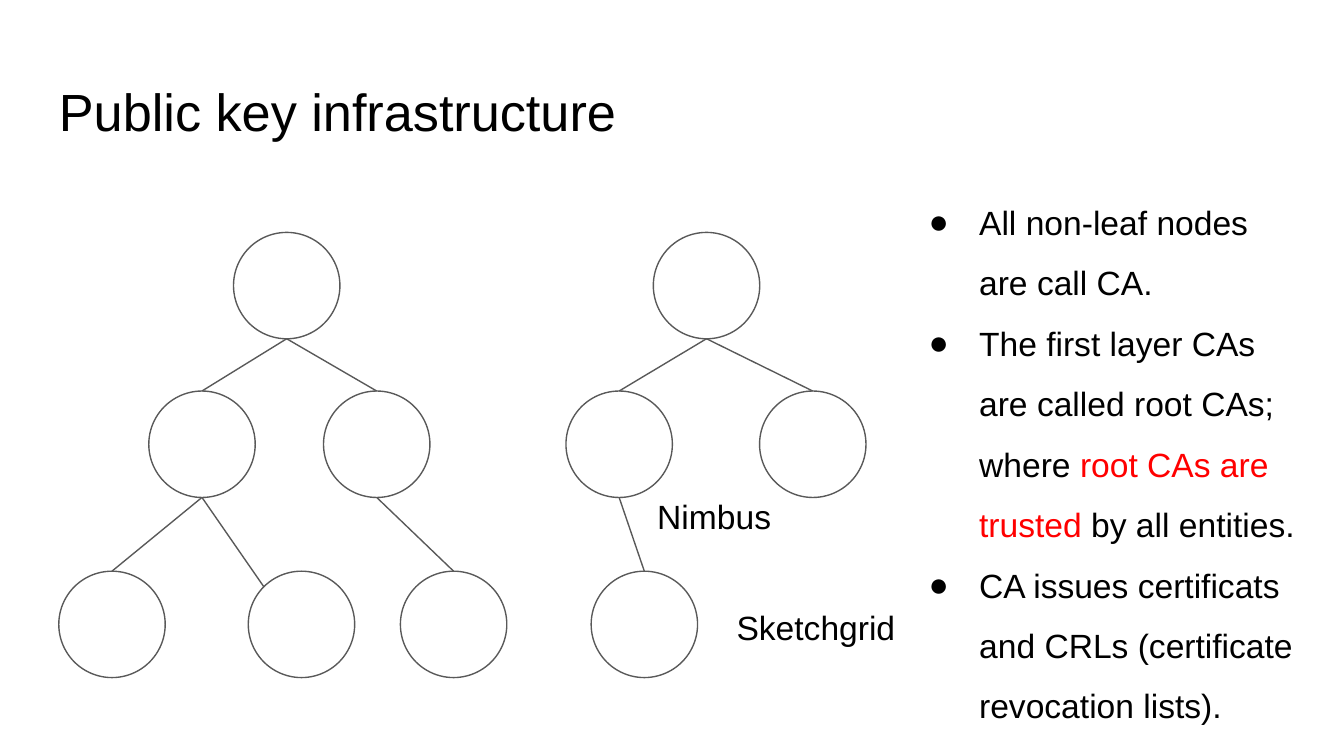
import pptx
import pptx.util
import pptx.dml.color
import pptx.enum.shapes
import pptx.enum.text
from dataclasses import dataclass
from lxml import etree

Pt = pptx.util.Pt
RGB = pptx.dml.color.RGBColor.from_string


@dataclass(frozen=True)
class Theme:
    font: str = "Arial"
    text: str = "000000"
    accent: str = "FF0000"
    line: str = "595959"
    title_size: float = 28
    body_size: float = 18
    line_width: float = 0.75
    inset: float = 7.2


THEME = Theme()

DIAMETER = 57
LEVELS = (0, 85, 181.5)  # top of each tree level

# Nodes: name -> (level, left). Edges: (parent, child, site on the child).
TREE_LEFT = {
    "nodes": {"root": (0, 93.6), "a": (1, 48.2), "b": (1, 141.8),
              "a1": (2, 0), "a2": (2, 101.5), "b1": (2, 183)},
    "edges": [("root", "a", "top"), ("root", "b", "top"), ("a", "a1", "top"),
              ("a", "a2", "corner"), ("b", "b1", "top")],
}
TREE_RIGHT = {
    "nodes": {"root": (0, 46.8), "a": (1, 0), "b": (1, 103.7), "a1": (2, 13.5)},
    "edges": [("root", "a", "top"), ("root", "b", "top"), ("a", "a1", "top")],
}
# Fractions of a circle's box where a line can attach
SITES = {"top": (0.5, 0), "bottom": (0.5, 1), "corner": (0.146, 0.146)}

BULLETS = [
    [("All non-leaf nodes are call CA.", THEME.text)],
    [("The first layer CAs are called root CAs; where ", THEME.text),
     ("root CAs are trusted", THEME.accent),
     (" by all entities.", THEME.text)],
    [("CA issues certificats and CRLs (certificate revocation lists).", THEME.text)],
]


def add_bullet(p, char, left, hanging):
    pPr = p._p.get_or_add_pPr()
    pPr.set("marL", str(Pt(left)))
    pPr.set("indent", str(-Pt(hanging)))
    ns = pptx.oxml.ns.qn
    clr = etree.SubElement(pPr, ns("a:buClr"))
    etree.SubElement(clr, ns("a:srgbClr"), val=THEME.text)
    etree.SubElement(pPr, ns("a:buFont"), typeface=THEME.font)
    etree.SubElement(pPr, ns("a:buChar"), char=char)


def add_text(s, box, paragraphs, size=THEME.body_size, spacing=None, bullet=None):
    """Place paragraphs, each a list of (text, colour) runs, in a text box."""
    sp = s.shapes.add_textbox(*map(Pt, box))
    tf = sp.text_frame
    tf.word_wrap = True
    tf.vertical_anchor = pptx.enum.text.MSO_ANCHOR.TOP
    tf.margin_left = tf.margin_right = Pt(THEME.inset)
    tf.margin_top = tf.margin_bottom = Pt(THEME.inset)
    for i, runs in enumerate(paragraphs):
        p = tf.add_paragraph() if i else tf.paragraphs[0]
        if spacing:
            p.line_spacing = spacing
        if bullet:
            add_bullet(p, bullet, left=36, hanging=27)
        for text, color in runs:
            r = p.add_run()
            r.text = text
            r.font.name = THEME.font
            r.font.size = Pt(size)
            r.font.color.rgb = RGB(color)


def style_line(line):
    line.color.rgb = RGB(THEME.line)
    line.width = Pt(THEME.line_width)


def add_tree(s, left, top, nodes, edges):
    """Draw circles and their links, relative to the tree's left and top."""
    corners = {name: (left + x, top + LEVELS[level])
               for name, (level, x) in nodes.items()}

    def site(name, key):
        return [Pt(c + f * DIAMETER) for c, f in zip(corners[name], SITES[key])]

    for x, y in corners.values():
        sp = s.shapes.add_shape(pptx.enum.shapes.MSO_SHAPE.OVAL,
                                Pt(x), Pt(y), Pt(DIAMETER), Pt(DIAMETER))
        sp.shadow.inherit = False
        sp.fill.background()
        style_line(sp.line)

    for parent, child, key in edges:
        cxn = s.shapes.add_connector(pptx.enum.shapes.MSO_CONNECTOR.STRAIGHT,
                                     *site(parent, "bottom"), *site(child, key))
        style_line(cxn.line)
        etree.SubElement(cxn._element.spPr, pptx.oxml.ns.qn("a:effectLst"))


def main():
    prs = pptx.Presentation()
    prs.slide_width, prs.slide_height = Pt(720), Pt(405)
    s = prs.slides.add_slide(prs.slide_layouts[6])

    # Title
    add_text(s, (24.5, 35, 671, 45), [[("Public key infrastructure", THEME.text)]],
             size=THEME.title_size)

    # Certificate trees
    add_tree(s, 31.5, 124.5, **TREE_LEFT)
    add_tree(s, 303.2, 124.5, **TREE_RIGHT)

    # Node labels
    for label, x, y in (("Sketchgrid", 387.5, 318), ("Nimbus", 345, 258.2)):
        add_text(s, (x, y, 109, 35), [[(label, THEME.text)]])

    # Explanation
    add_text(s, (481.5, 90, 224, 297), BULLETS, spacing=1.5, bullet="●")

    prs.save("out.pptx")


if __name__ == "__main__":
    main()
